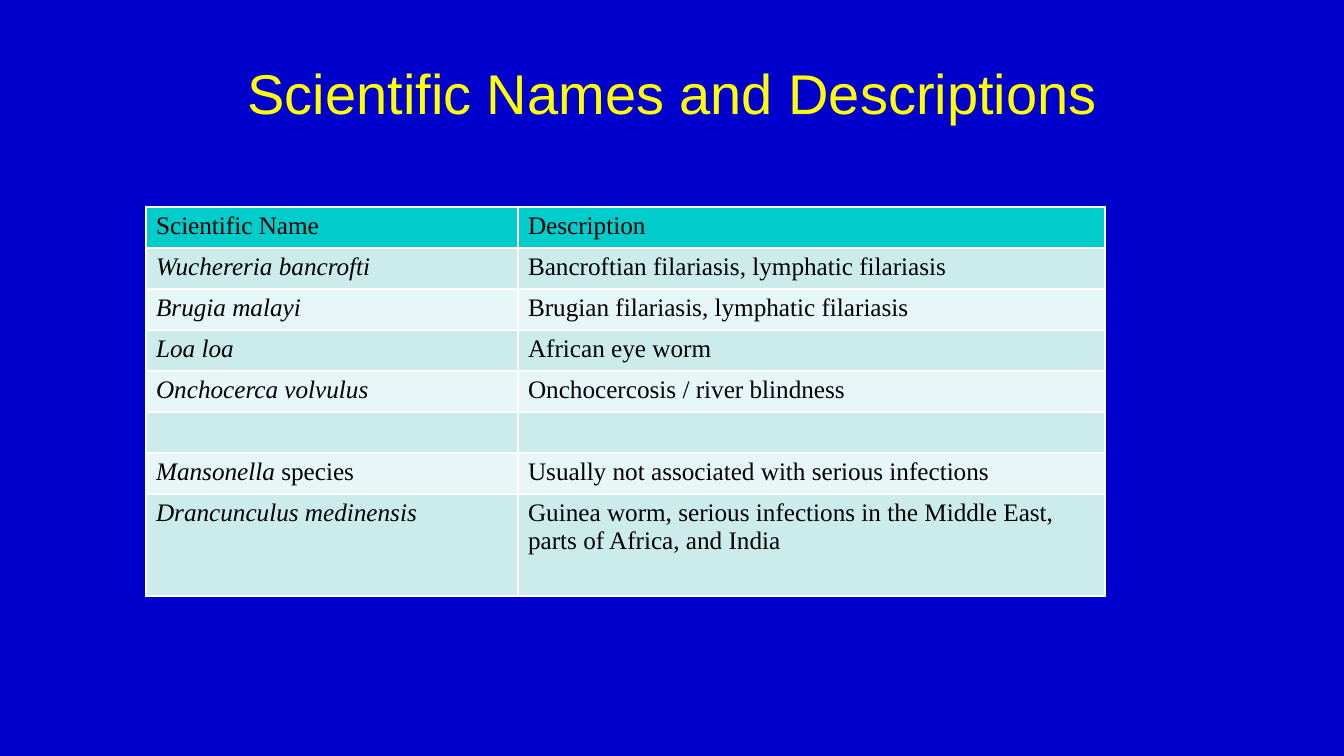
"""Build the slide of filarial worm names and descriptions."""
from dataclasses import dataclass

from lxml import etree
from pptx import Presentation, util as u
from pptx.dml.color import RGBColor
from pptx.enum import text
from pptx.oxml import ns


@dataclass(frozen=True)
class Theme:
    background: str = "0000CC"
    title: str = "FFFF00"
    ink: str = "000000"
    header: str = "00CCCC"
    bands: tuple = ("CCECEC", "E7F6F6")
    border: str = "FFFFFF"
    border_pt: int = 1
    title_font: str = "Arial"
    body_font: str = "Times New Roman"
    title_pt: int = 40
    body_pt: int = 18


def px(n):
    return u.Emu(round(n * 914400 / 100.8))


def add_text(p, content, *, font, size, color, italic=False):
    r = p.add_run()
    r.text = content
    r.font.name = font
    r.font.size = u.Pt(size)
    r.font.color.rgb = RGBColor.from_string(color)
    r.font.italic = italic


class SlideBuilder:
    def __init__(self, prs, theme):
        self.theme = theme
        self.s = prs.slides.add_slide(prs.slide_layouts[6])
        fill = self.s.background.fill
        fill.solid()
        fill.fore_color.rgb = RGBColor.from_string(theme.background)

    def title(self, content, x, y, w, h):
        tf = self.s.shapes.add_textbox(px(x), px(y), px(w), px(h)).text_frame
        tf.word_wrap = True
        tf.vertical_anchor = text.MSO_ANCHOR.MIDDLE
        p = tf.paragraphs[0]
        p.alignment = text.PP_ALIGN.CENTER
        t = self.theme
        add_text(p, content, font=t.title_font, size=t.title_pt, color=t.title)

    def table(self, rows, x, y, widths, heights):
        table = self.s.shapes.add_table(
            len(rows), len(widths), px(x), px(y), px(sum(widths)), px(sum(heights))
        ).table
        table.first_row = table.horz_banding = False
        for column, width in zip(table.columns, widths):
            column.width = px(width)
        for i, (row, height) in enumerate(zip(rows, heights)):
            table.rows[i].height = px(height)
            fill = self.theme.bands[(i - 1) % 2] if i else self.theme.header
            for j, runs in enumerate(row):
                self.cell(table.cell(i, j), runs, fill)

    def cell(self, cell, runs, fill):
        t = self.theme
        for side in ("lnL", "lnR", "lnT", "lnB"):
            line = etree.SubElement(
                cell._tc.get_or_add_tcPr(), ns.qn(f"a:{side}"), w=str(u.Pt(t.border_pt))
            )
            solid = etree.SubElement(line, ns.qn("a:solidFill"))
            etree.SubElement(solid, ns.qn("a:srgbClr"), val=t.border)
        cell.fill.solid()
        cell.fill.fore_color.rgb = RGBColor.from_string(fill)
        p = cell.text_frame.paragraphs[0]
        p.font.size = u.Pt(t.body_pt)
        for content, italic in runs:
            add_text(p, content, font=t.body_font, size=t.body_pt, color=t.ink, italic=italic)


def species(name, description, suffix=""):
    runs = [(name, True), (suffix, False)]
    return [[run for run in runs if run[0]], [(description, False)]]


def main():
    prs = Presentation()
    prs.slide_width, prs.slide_height = px(1344), px(756)
    slide = SlideBuilder(prs, Theme())
    slide.title("Scientific Names and Descriptions", 101, 25, 1142, 134)
    rows = [
        [[("Scientific Name", False)], [("Description", False)]],
        species("Wuchereria bancrofti", "Bancroftian filariasis, lymphatic filariasis"),
        species("Brugia malayi", "Brugian filariasis, lymphatic filariasis"),
        species("Loa loa", "African eye worm"),
        species("Onchocerca volvulus", "Onchocercosis / river blindness"),
        [[], []],
        species("Mansonella ", "Usually not associated with serious infections", "species"),
        species(
            "Drancunculus medinensis",
            "Guinea worm, serious infections in the Middle East, parts of Africa, and India",
        ),
    ]
    slide.table(rows, 146, 207, [372, 587], [41] * 7 + [102])
    prs.save("out.pptx")


if __name__ == "__main__":
    main()
